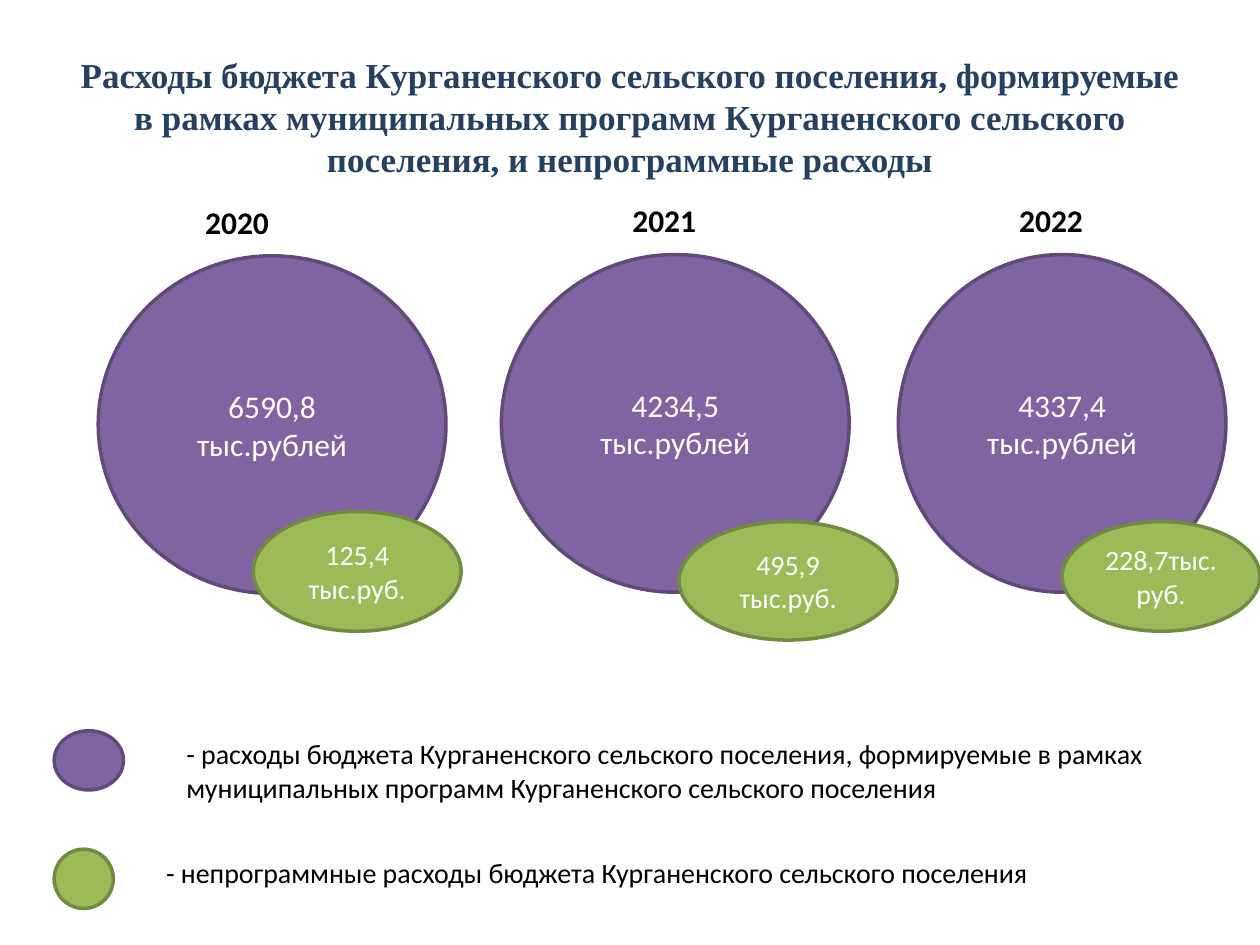
from dataclasses import dataclass

from pptx import Presentation
from pptx.dml.color import RGBColor
from pptx.enum.shapes import MSO_SHAPE
from pptx.enum.text import MSO_ANCHOR, MSO_AUTO_SIZE, PP_ALIGN
from pptx.util import Inches, Pt


@dataclass(frozen=True)
class Theme:
    head: str = "254061"
    text: str = "000000"
    light: str = "FFFFFF"
    program: tuple = ("8064A2", "5F4A78")
    other: tuple = ("9BBB59", "738A42")
    serif: str = "Times New Roman"
    sans: str = "Calibri"
    title: int = 20
    large: int = 18
    small: int = 16


THEME = Theme()

# Year, circle box, label offset, label height, oval box within the circle box, texts
YEARS = [
    ("2020", (0.78, 2.03, 2.76, 2.68), 0.75, 0.4, (1.23, 2.03, 1.65, 0.95),
     "6590,8\nтыс.рублей", "125,4 тыс.руб."),
    ("2021", (3.98, 2.02, 2.76, 2.68), 0.94, 0.7, (1.41, 2.12, 1.73, 0.94),
     "4234,5\nтыс.рублей", "495,9\nтыс.руб."),
    ("2022", (7.13, 2.02, 2.6, 2.68), 0.86, 0.4, (1.3, 2.12, 1.57, 0.87),
     "4337,4\nтыс.рублей", "228,7тыс.руб."),
]

# Box, width of the key, text offset, colours, text
LEGEND = [
    ((0.43, 5.8, 8.9, 0.64), 0.55, 0.95, THEME.program,
     "- расходы бюджета Курганенского сельского поселения, формируемые в рамках "
     "муниципальных программ Курганенского сельского поселения"),
    ((0.43, 6.74, 8.74, 0.37), 0.47, 0.79, THEME.other,
     "- непрограммные расходы бюджета Курганенского сельского поселения"),
]
KEY_HEIGHT = 0.47


def write(frame, text, size, color, face=THEME.sans, bold=False, align=PP_ALIGN.LEFT):
    frame.word_wrap = True
    frame.text = text
    for para in frame.paragraphs:
        para.alignment = align
        font = para.font
        font.name, font.size, font.bold = face, Pt(size), bold
        font.color.rgb = RGBColor.from_string(color)


def add_oval(slide, box, colors, text="", size=THEME.large):
    oval = slide.shapes.add_shape(MSO_SHAPE.OVAL, *map(Inches, box))
    oval.shadow.inherit = False
    fill, line = map(RGBColor.from_string, colors)
    oval.fill.solid()
    oval.fill.fore_color.rgb = fill
    oval.line.color.rgb = line
    oval.line.width = Pt(2)
    if text:
        oval.text_frame.vertical_anchor = MSO_ANCHOR.MIDDLE
        write(oval.text_frame, text, size, THEME.light, align=PP_ALIGN.CENTER)


def add_label(slide, box, text, size, bold=False):
    frame = slide.shapes.add_textbox(*map(Inches, box)).text_frame
    frame.auto_size = MSO_AUTO_SIZE.SHAPE_TO_FIT_TEXT
    write(frame, text, size, THEME.text, bold=bold)


def add_title(slide, box, text):
    title = slide.shapes.title
    title.left, title.top, title.width, title.height = map(Inches, box)
    title.text_frame.vertical_anchor = MSO_ANCHOR.MIDDLE
    write(title.text_frame, text, THEME.title, THEME.head, THEME.serif, True,
          PP_ALIGN.CENTER)


def add_year(slide, year, box, shift, height, inner, total, rest):
    """Draw a year's label, its program circle and the overlapping oval."""
    left, top = box[:2]
    dx, dy, wide, high = inner
    add_oval(slide, box, THEME.program, total)
    add_oval(slide, (left + dx, top + dy, wide, high), THEME.other, rest, THEME.small)
    add_label(slide, (left + shift, top - 0.47, 0.79, height), year, THEME.large, True)


def add_key(slide, box, wide, shift, colors, text):
    left, top, width, height = box
    add_oval(slide, (left, top, wide, KEY_HEIGHT), colors)
    add_label(slide, (left + shift, top, width - shift, height), text, THEME.small)


def main():
    deck = Presentation()
    deck.slide_width, deck.slide_height = Inches(10), Inches(7.5)
    slide = deck.slides.add_slide(deck.slide_layouts[5])
    add_title(slide, (0.5, 0.3, 9, 1.25),
              "Расходы бюджета Курганенского сельского поселения, формируемые "
              "в рамках муниципальных программ Курганенского сельского "
              "поселения, и непрограммные расходы")
    for year in YEARS:
        add_year(slide, *year)
    for key in LEGEND:
        add_key(slide, *key)
    deck.save("out.pptx")


if __name__ == "__main__":
    main()
